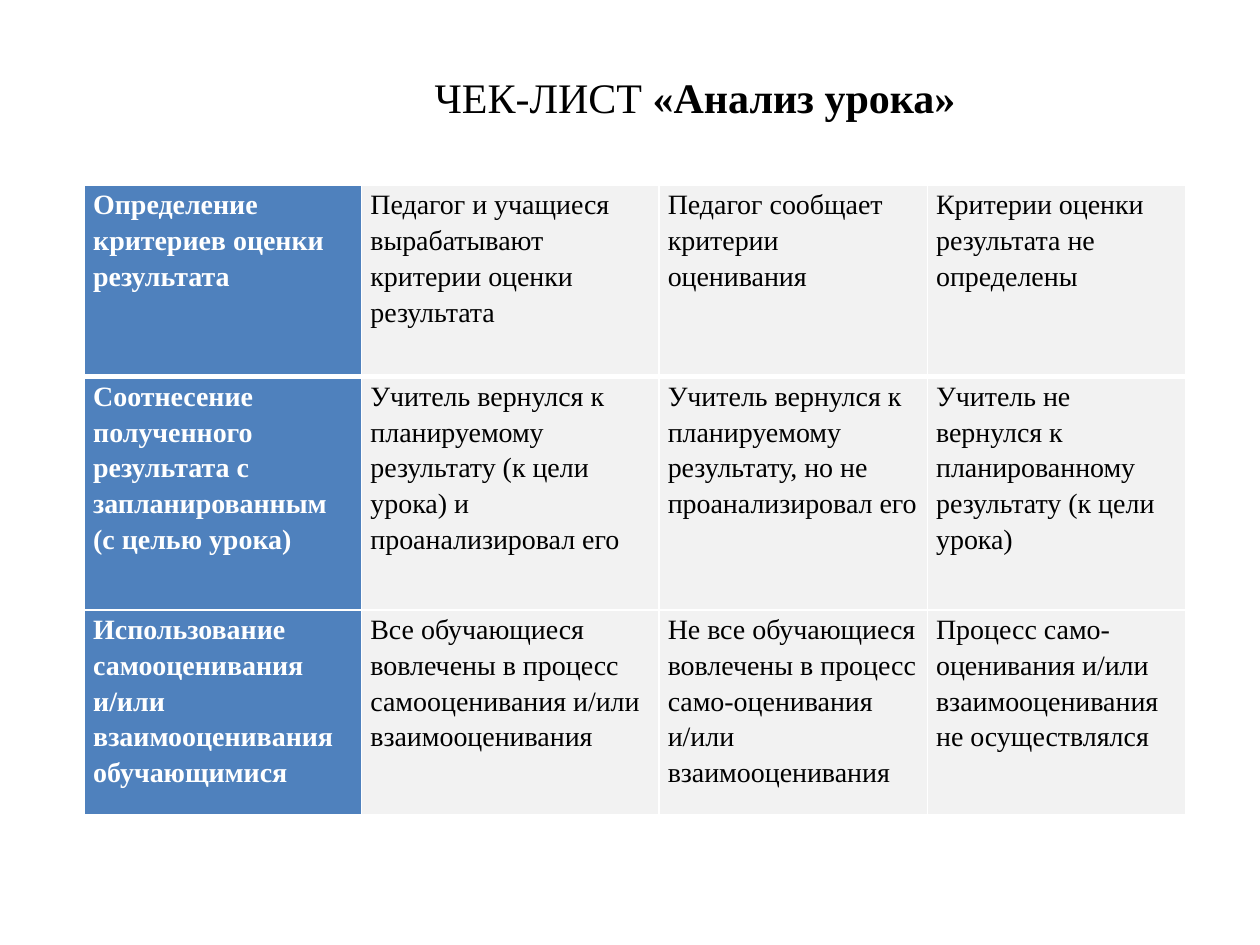
"""Build the lesson analysis checklist slide."""
from lxml import etree
from pptx import Presentation
from pptx.dml.color import RGBColor
from pptx.enum.text import MSO_ANCHOR, MSO_AUTO_SIZE, PP_ALIGN
from pptx.oxml.ns import qn
from pptx.util import Inches, Pt

FONT = "Times New Roman"
ROWS = [
    ["Определение критериев оценки результата",
     "Педагог и учащиеся вырабатывают критерии оценки результата",
     "Педагог сообщает критерии оценивания",
     "Критерии оценки результата не определены"],
    ["Соотнесение полученного результата с запланированным (с целью урока)",
     "Учитель вернулся к планируемому результату (к цели урока) и проанализировал его",
     "Учитель вернулся к планируемому результату, но не проанализировал его",
     "Учитель не вернулся к планированному результату (к цели урока)"],
    ["Использование самооценивания и/или взаимооценивания обучающимися",
     "Все обучающиеся вовлечены в процесс самооценивания и/или взаимооценивания",
     "Не все обучающиеся вовлечены в процесс само-оценивания и/или взаимооценивания",
     "Процесс само-оценивания и/или взаимооценивания не осуществлялся"],
]
COL_WIDTHS = [2.2, 2.36, 2.13, 2.05]
ROW_HEIGHTS = [1.52, 1.85, 1.63]


def add_run(p, text, size, color, bold):
    r = p.add_run()
    r.text = text
    r.font.name = FONT
    r.font.size = Pt(size)
    r.font.bold = bold
    r.font.color.rgb = RGBColor.from_string(color)


def add_border(cell, side, width, color):
    ln = etree.SubElement(cell._tc.get_or_add_tcPr(), qn(f"a:{side}"), w=str(Pt(width)))
    fill = etree.SubElement(ln, qn("a:solidFill"))
    etree.SubElement(fill, qn("a:srgbClr"), val=color)


prs = Presentation()
prs.slide_width, prs.slide_height = Inches(10), Inches(7.5)
s = prs.slides.add_slide(prs.slide_layouts[5])

title = s.shapes.title
title.left, title.top = Inches(3.35), Inches(0.52)
title.width, title.height = Inches(4.38), Inches(0.5)
tf = title.text_frame
tf.word_wrap = False
tf.auto_size = MSO_AUTO_SIZE.SHAPE_TO_FIT_TEXT
tf.vertical_anchor = MSO_ANCHOR.TOP
p = tf.paragraphs[0]
p.alignment = PP_ALIGN.LEFT
add_run(p, "ЧЕК-ЛИСТ", 24, "000000", False)
add_run(p, " «Анализ урока»", 24, "000000", True)

table = s.shapes.add_table(
    len(ROWS), len(COL_WIDTHS), Inches(0.67), Inches(1.47),
    Inches(sum(COL_WIDTHS)), Inches(sum(ROW_HEIGHTS))).table
table.first_col = True
table.horz_banding = False
for col, width in zip(table.columns, COL_WIDTHS):
    col.width = Inches(width)
for row, height in zip(table.rows, ROW_HEIGHTS):
    row.height = Inches(height)

for i, texts in enumerate(ROWS):
    for j, text in enumerate(texts):
        cell = table.cell(i, j)
        cell.margin_left = cell.margin_right = Inches(0.07)
        cell.margin_top = cell.margin_bottom = 0
        widths = {"lnL": 1, "lnR": 1, "lnT": 3 if i == 1 else 1, "lnB": 3 if i == 0 else 1}
        for side, width in widths.items():
            add_border(cell, side, width, "FFFFFF")
        head = j == 0
        cell.fill.solid()
        cell.fill.fore_color.rgb = RGBColor.from_string("4F81BD" if head else "F2F2F2")
        p = cell.text_frame.paragraphs[0]
        p.line_spacing = 1.15
        add_run(p, text, 16, "FFFFFF" if head else "000000", head)

prs.save("out.pptx")
